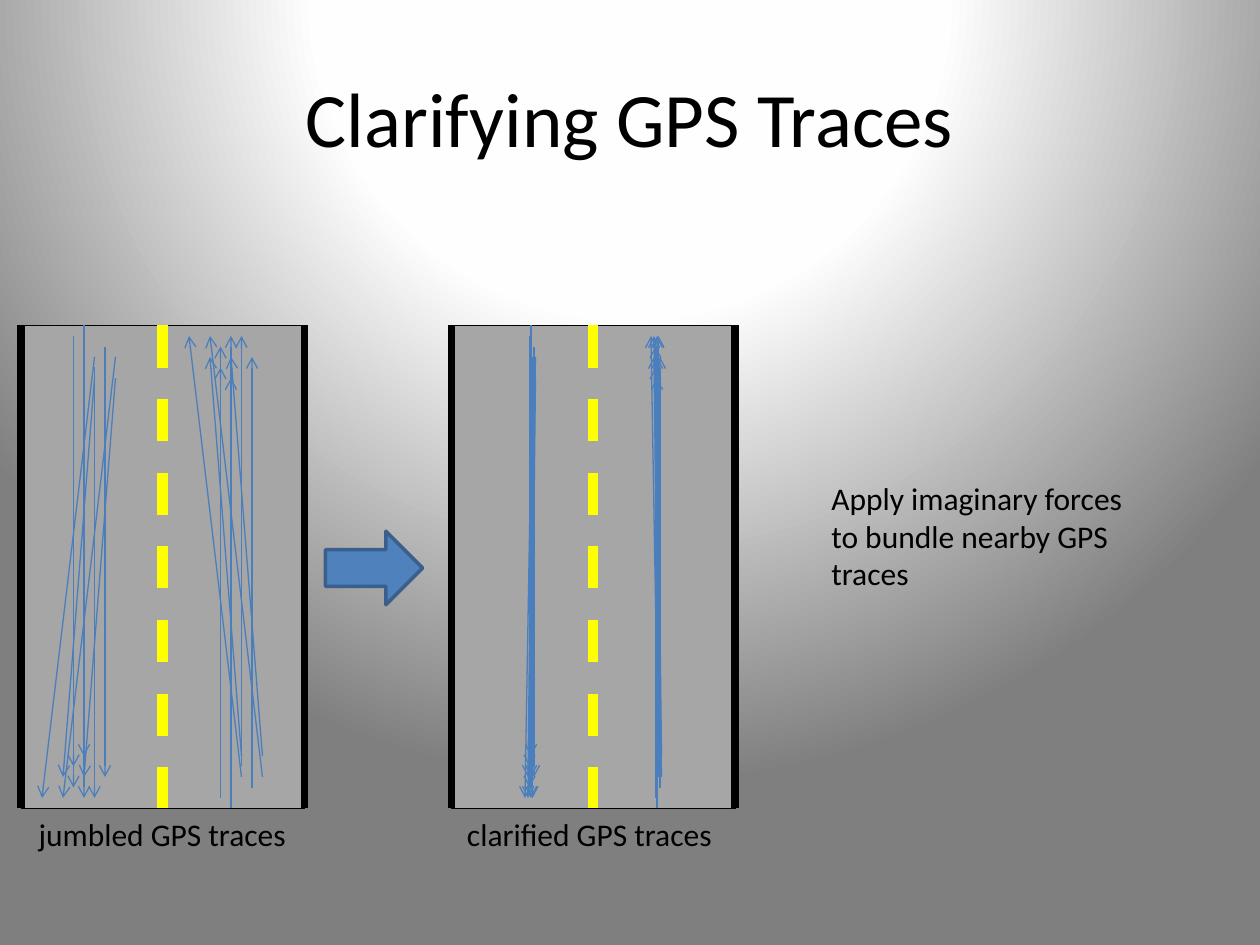
from lxml import etree
from pptx import Presentation
from pptx.dml.color import RGBColor
from pptx.enum.dml import MSO_LINE
from pptx.enum.shapes import MSO_CONNECTOR, MSO_SHAPE
from pptx.enum.text import MSO_ANCHOR, MSO_AUTO_SIZE, PP_ALIGN
from pptx.oxml import parse_xml
from pptx.oxml.ns import nsdecls, qn
from pptx.util import Inches, Pt

STRAIGHT = MSO_CONNECTOR.STRAIGHT
RECTANGLE, RIGHT_ARROW = MSO_SHAPE.RECTANGLE, MSO_SHAPE.RIGHT_ARROW
DASH = MSO_LINE.DASH
MIDDLE, CENTER = MSO_ANCHOR.MIDDLE, PP_ALIGN.CENTER
FIT_SHAPE = MSO_AUTO_SIZE.SHAPE_TO_FIT_TEXT

BLACK = RGBColor(0x00, 0x00, 0x00)
ASPHALT = RGBColor(0xA6, 0xA6, 0xA6)
YELLOW = RGBColor(0xFF, 0xFF, 0x00)
TRACE_BLUE = RGBColor(0x4B, 0x7E, 0xBC)
ARROW_BLUE = RGBColor(0x4F, 0x81, 0xBD)
ARROW_EDGE = RGBColor(0x3A, 0x5F, 0x8C)
BACKDROP = (
    (0, RGBColor(0xFF, 0xFF, 0xFF)),
    (40, RGBColor(0xFE, 0xFE, 0xFE)),
    (100, RGBColor(0x7F, 0x7F, 0x7F)),
)
FONT = "Calibri"

# The drawing lies on a grid of twelfths of an inch.
CELL = Inches(1) / 12
ROAD_TOP, ROAD_BOTTOM, ROAD_WIDTH = 31, 77, 27
JUMBLED_LEFT, CLARIFIED_LEFT = 2, 43
BUNDLING = 7

# Each trace: start column, start row, end column, end row.
NORTHBOUND = (
    (25, 74, 20, 32), (23, 73, 23, 32), (24, 75, 24, 34), (25, 72, 22, 34),
    (22, 74, 22, 32), (23, 74, 18, 32), (21, 76, 21, 35), (22, 77, 22, 36),
    (23, 72, 20, 34), (21, 75, 21, 33),
)
SOUTHBOUND = (
    (11, 34, 6, 76), (9, 35, 9, 76), (10, 33, 10, 74), (11, 36, 8, 74),
    (8, 34, 8, 76), (9, 34, 4, 76), (7, 32, 7, 73), (8, 31, 8, 72),
    (9, 36, 6, 74), (7, 33, 7, 75),
)


def grid(*cells):
    return [round(cell * CELL) for cell in cells]


def set_backdrop(slide):
    """Fill the background with a round gradient centred above the slide."""
    stops = "".join(
        f'<a:gs pos="{share * 1000}"><a:srgbClr val="{color}"/></a:gs>'
        for share, color in BACKDROP
    )
    background = parse_xml(
        f'<p:bg {nsdecls("p", "a")}><p:bgPr><a:gradFill rotWithShape="1">'
        f'<a:gsLst>{stops}</a:gsLst><a:path path="circle">'
        '<a:fillToRect l="50000" t="-80000" r="50000" b="180000"/></a:path>'
        '</a:gradFill><a:effectLst/></p:bgPr></p:bg>'
    )
    slide.element.cSld.insert(0, background)


def format_text(frame, text, size):
    frame.text = text
    para = frame.paragraphs[0]
    para.font.name = FONT
    para.font.size = Pt(size)
    para.font.color.rgb = BLACK
    return para


def add_title(slide, text):
    title = slide.shapes.title
    title.left, title.top = Inches(0.5), Inches(0.3)
    title.width, title.height = Inches(9), Inches(1.25)
    title.text_frame.vertical_anchor = MIDDLE
    format_text(title.text_frame, text, 44).alignment = CENTER


def add_text(slide, text, left, top, width, height, wrap):
    box = slide.shapes.add_textbox(*grid(left, top, width, height))
    box.text_frame.word_wrap = wrap
    box.text_frame.auto_size = FIT_SHAPE
    format_text(box.text_frame, text, 18)


def add_block(slide, preset, cells, fill, edge, weight):
    block = slide.shapes.add_shape(preset, *grid(*cells))
    block.shadow.inherit = False
    block.fill.solid()
    block.fill.fore_color.rgb = fill
    block.line.color.rgb = edge
    block.line.width = Pt(weight)
    return block


def add_line(shapes, ends, color, weight, arrow=False):
    connector = shapes.add_connector(STRAIGHT, *grid(*ends))
    connector.line.color.rgb = color
    connector.line.width = Pt(weight)
    properties = connector.element.spPr
    if arrow:
        outline = properties.find(qn("a:ln"))
        etree.SubElement(outline, qn("a:tailEnd"), type="arrow")
    etree.SubElement(properties, qn("a:effectLst"))
    return connector


def add_traces(slide, traces):
    group = slide.shapes.add_group_shape()
    for trace in traces:
        add_line(group.shapes, trace, TRACE_BLUE, 0.75, arrow=True)


def bundle(traces, left):
    """Squeeze the traces sideways into a narrow band that starts at left."""
    leftmost = min(min(start, end) for start, _, end, _ in traces)

    def squeeze(column):
        return left + (column - leftmost) / BUNDLING

    return [(squeeze(start), top, squeeze(end), bottom)
            for start, top, end, bottom in traces]


def add_road(slide, left, caption, caption_left):
    height = ROAD_BOTTOM - ROAD_TOP
    road = add_block(slide, RECTANGLE, (left, ROAD_TOP, ROAD_WIDTH, height),
                     ASPHALT, BLACK, 0.25)
    middle = left + ROAD_WIDTH / 2
    divider = add_line(slide.shapes, (middle, ROAD_TOP, middle, ROAD_BOTTOM),
                       YELLOW, 6)
    divider.line.dash_style = DASH
    divider.begin_connect(road, 0)
    divider.end_connect(road, 2)
    for side in (left, left + ROAD_WIDTH):
        add_line(slide.shapes, (side, ROAD_TOP, side, ROAD_BOTTOM), BLACK, 4.5)
    add_text(slide, caption, caption_left, ROAD_BOTTOM, 26.2, 4.8, wrap=False)


def main():
    deck = Presentation()
    deck.slide_width, deck.slide_height = Inches(10), Inches(7.5)
    slide = deck.slides.add_slide(deck.slide_layouts.get_by_name("Title Only"))
    set_backdrop(slide)
    add_title(slide, "Clarifying GPS Traces")

    add_road(slide, JUMBLED_LEFT, "jumbled GPS traces", 2.5)
    add_traces(slide, NORTHBOUND)
    add_traces(slide, SOUTHBOUND)

    add_block(slide, RIGHT_ARROW, (31, 50.6, 9.25, 7), ARROW_BLUE, ARROW_EDGE, 2)

    add_road(slide, CLARIFIED_LEFT, "clarified GPS traces", 43.3)
    add_traces(slide, bundle(SOUTHBOUND, 50))
    add_traces(slide, bundle(NORTHBOUND, 62))

    add_text(slide, "Apply imaginary forces to bundle nearby GPS traces",
             78, 45, 31, 12.1, wrap=True)
    deck.save("out.pptx")


if __name__ == "__main__":
    main()
